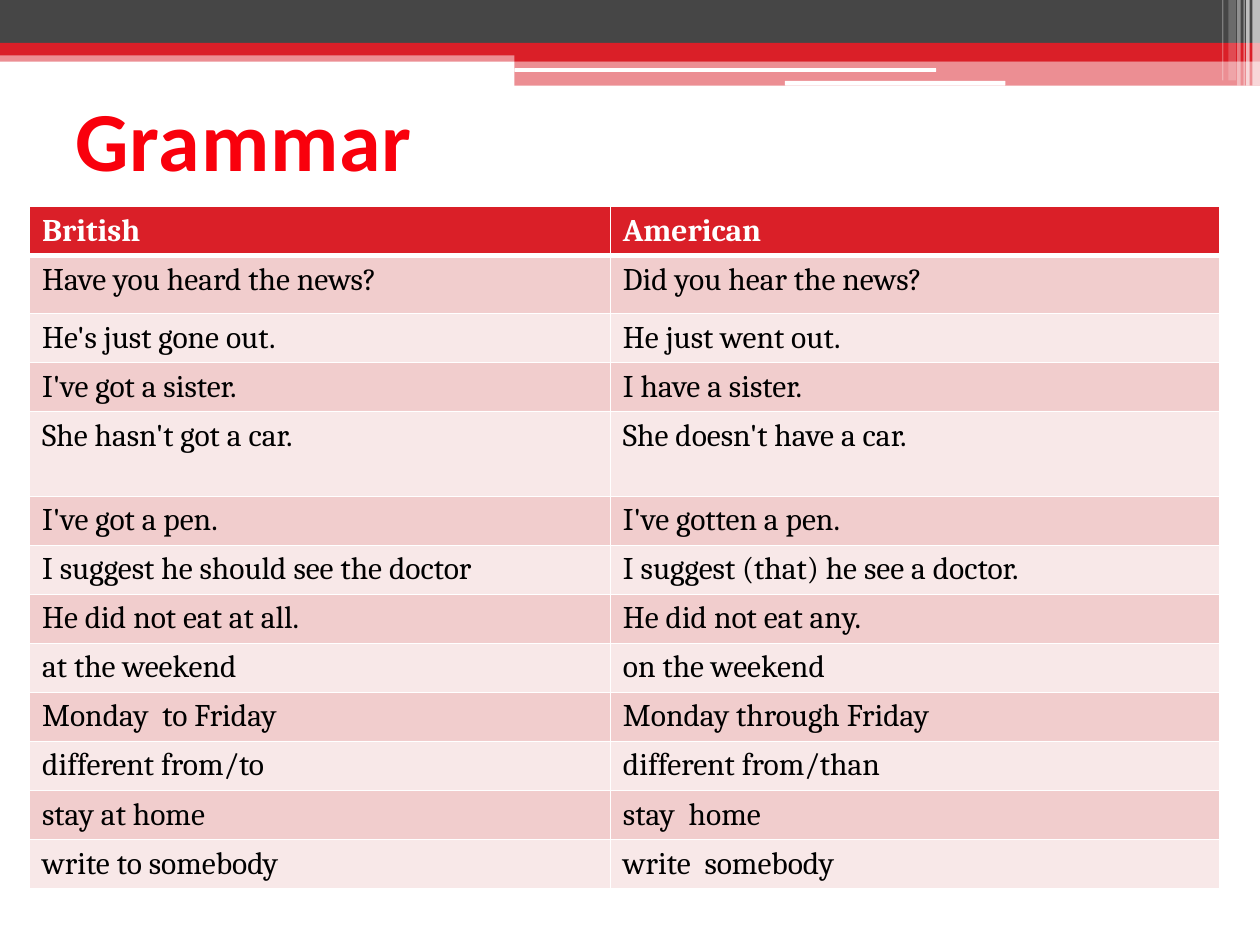
from lxml import etree
from pptx import Presentation
from pptx.dml import color
from pptx.enum import shapes, text
from pptx.oxml import ns
from pptx.util import Pt

RED, DARK, WHITE, BLACK = "DA1F28", "464646", "FFFFFF", "000000"
BANDS = ("F1CDCD", "F8E8E8")
ROWS = [
    ("British", "American"),
    ("Have you heard the news?", "Did you hear the news?"),
    ("He's just gone out.", "He just went out."),
    ("I've got a sister.", "I have a sister."),
    ("She hasn't got a car.", "She doesn't have a car."),
    ("I've got a pen.", "I've gotten a pen."),
    ("I suggest he should see the doctor", "I suggest (that) he see a doctor."),
    ("He did not eat at all.", "He did not eat any."),
    ("at the weekend", "on the weekend"),
    ("Monday  to Friday", "Monday through Friday"),
    ("different from/to", "different from/than"),
    ("stay at home", "stay  home"),
    ("write to somebody", "write  somebody"),
]
ROW_HEIGHT, TALL_ROWS = 28, {1: 33, 4: 48.5}


def rgb(value):
    """Turn a hex string into a colour."""
    return color.RGBColor.from_string(value)


def apply(target, values):
    """Set each named attribute of the target."""
    for name, value in values.items():
        setattr(target, name, value)


def child(parent, tag, **attributes):
    """Add a drawing element below the parent."""
    return etree.SubElement(parent, ns.qn(tag), attributes)


def add_bar(page, box, fill, opacity=100, rounded=False):
    """Draw one borderless bar, optionally see-through or rounded."""
    kind = shapes.MSO_SHAPE.ROUNDED_RECTANGLE if rounded else shapes.MSO_SHAPE.RECTANGLE
    bar = page.shapes.add_shape(kind, *map(Pt, box))
    bar.shadow.inherit = False
    bar.line.fill.background()
    bar.fill.solid()
    bar.fill.fore_color.rgb = rgb(fill)
    if opacity < 100:
        tint = bar.fill._xPr.find(".//" + ns.qn("a:srgbClr"))
        child(tint, "a:alpha", val=str(opacity * 1000))


def add_header(page, box):
    """Draw the layered bands and the stripes at their right end."""
    left, top, width, height = box
    right, step = left + width, 426
    inner = right - step
    bands = [
        (left, 28.8, width, 6.5, RED, 50),
        (left, 0, width, 24.5, DARK, 100),
        (left, 24.5, width, 7.2, RED, 100),
        (inner, 28.1, right - inner, 7.2, RED, 100),
        (inner, 35.3, right - inner, 13.7, RED, 50),
    ]
    for x, y, wide, high, fill, opacity in bands:
        add_bar(page, (x, top + y, wide, high), fill, opacity)
    for x, y, wide, high in [(0, 38.9, 241, 2.2), (154.5, 46.2, 126, 2.7)]:
        add_bar(page, (inner + x, top + y, wide, high), WHITE, rounded=True)
    stripes = [
        (4.3, 4.3, height, 65), (7.9, 2, height, 65), (9.4, 0.7, height, 60),
        (13, 2, height, 40), (18, 4.3, height - 3, 20), (21.6, 0.7, height - 3, 30),
    ]
    for offset, wide, high, opacity in stripes:
        add_bar(page, (right - offset, top, wide, high), WHITE, opacity)


def add_title(page, box, wording):
    """Place the title and give it a red gradient."""
    title = page.shapes.title
    apply(title, dict(zip(("left", "top", "width", "height"), map(Pt, box))))
    apply(title.text_frame, {"vertical_anchor": text.MSO_ANCHOR.MIDDLE, "word_wrap": True})
    para = title.text_frame.paragraphs[0]
    para.alignment = text.PP_ALIGN.LEFT
    span = para.add_run()
    span.text = wording
    apply(span.font, {"name": "Calibri", "size": Pt(48), "bold": True})
    span.font.fill.gradient()
    span.font.fill.gradient_angle = 270
    stops = zip(span.font.fill.gradient_stops, [(0.25, "F9000C"), (1, "B00008")])
    for stop, (position, value) in stops:
        stop.position = position
        stop.color.rgb = rgb(value)
    span.font._element.set("spc", "50")


def add_border(cell, side, width):
    """Draw a white border on one side of a cell."""
    line = child(cell._tc.get_or_add_tcPr(), "a:ln" + side, w=str(Pt(width)))
    child(child(line, "a:solidFill"), "a:srgbClr", val=WHITE)


def format_cell(cell, wording, fill, ink, bold, edges):
    """Write and style one table cell."""
    for side, width in edges.items():
        add_border(cell, side, width)
    cell.fill.solid()
    cell.fill.fore_color.rgb = rgb(fill)
    span = cell.text_frame.paragraphs[0].add_run()
    span.text = wording
    apply(span.font, {"name": "Cambria", "size": Pt(18), "bold": bold})
    span.font.color.rgb = rgb(ink)


def add_comparison(page, box, rows):
    """Build the banded table with a red heading row."""
    frame = page.shapes.add_table(len(rows), 2, *map(Pt, box))
    table, first = frame.table, 331.9
    for column, width in zip(table.columns, (first, box[2] - first)):
        column.width = Pt(width)
    for index, wordings in enumerate(rows):
        table.rows[index].height = Pt(TALL_ROWS.get(index, ROW_HEIGHT))
        heading = index == 0
        fill, ink = (RED, WHITE) if heading else (BANDS[(index - 1) % 2], BLACK)
        edges = {"L": 1, "R": 1, "T": 3 if index == 1 else 1, "B": 3 if heading else 1}
        for cell, wording in zip(table.rows[index].cells, wordings):
            format_cell(cell, wording, fill, ink, heading, edges)


def main():
    """Build and save the deck."""
    deck = Presentation()
    apply(deck, {"slide_width": Pt(720), "slide_height": Pt(540)})
    page = deck.slides.add_slide(deck.slide_layouts[5])
    add_header(page, (0, 0, 720, 49))
    add_title(page, (36, 45, 648, 67.5), "Grammar")
    add_comparison(page, (16.9, 118.1, 680.4, 389.5), ROWS)
    deck.save("out.pptx")


if __name__ == "__main__":
    main()
